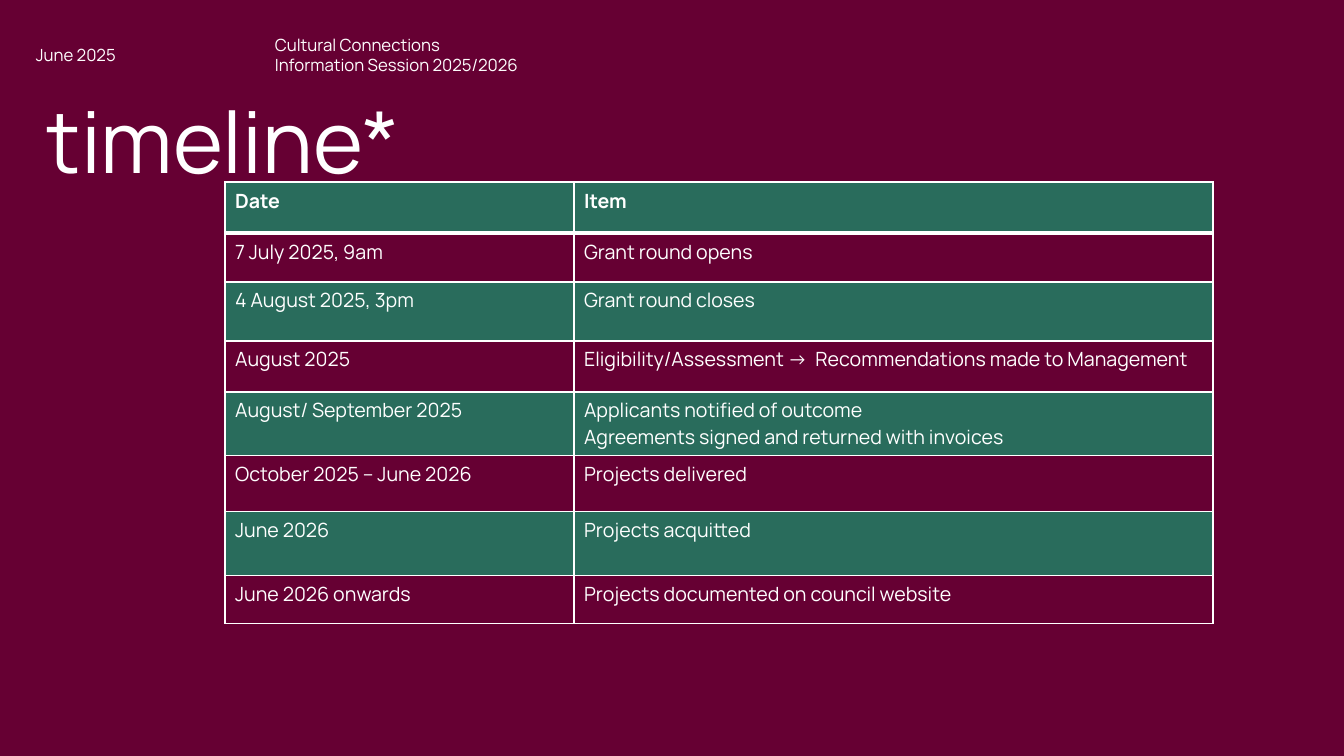
from lxml import etree
from pptx import Presentation
from pptx.dml.color import RGBColor
from pptx.enum.text import MSO_ANCHOR
from pptx.oxml.ns import qn
from pptx.util import Emu, Pt

TOP, MIDDLE = MSO_ANCHOR.TOP, MSO_ANCHOR.MIDDLE
WHITE = RGBColor(0xFF, 0xFF, 0xFF)
MAROON = RGBColor(0x66, 0x00, 0x33)
GREEN = RGBColor(0x29, 0x6C, 0x5C)
FONT = "Manrope"
EMU_PER_INCH = 914400
PX_PER_INCH = 100.8

COLUMN_WIDTHS = (349, 639)
# Each row: height in px, date, item
TIMELINE = [
    (51, "Date", "Item"),
    (49, "7 July 2025, 9am", "Grant round opens"),
    (59, "4 August 2025, 3pm", "Grant round closes"),
    (51, "August 2025",
     "Eligibility/Assessment ->  Recommendations made to Management"),
    (64, "August/ September 2025",
     "Applicants notified of outcome\nAgreements signed and returned with invoices"),
    (56, "October 2025 – June 2026", "Projects delivered"),
    (64, "June 2026", "Projects acquitted"),
    (48, "June 2026 onwards", "Projects documented on council website"),
]


def px(length):
    return Emu(round(length * EMU_PER_INCH / PX_PER_INCH))


def write_text(frame, text, size, bold=False, line_spacing=None):
    frame.text = text
    for paragraph in frame.paragraphs:
        if line_spacing:
            paragraph.line_spacing = line_spacing
        for run in paragraph.runs:
            run.font.name = FONT
            run.font.size = Pt(size)
            run.font.bold = bold
            run.font.color.rgb = WHITE


def add_text(slide, text, left, top, width, height, anchor=TOP, **text_format):
    frame = slide.shapes.add_textbox(px(left), px(top), px(width), px(height)).text_frame
    frame.word_wrap = True
    frame.vertical_anchor = anchor
    write_text(frame, text, **text_format)


def set_borders(cell, top, bottom):
    properties = cell._tc.get_or_add_tcPr()
    sides = (("a:lnL", 1), ("a:lnR", 1), ("a:lnT", top), ("a:lnB", bottom))
    for position, (side, points) in enumerate(sides):
        line = etree.Element(qn(side), w=str(Pt(points)))
        fill = etree.SubElement(line, qn("a:solidFill"))
        etree.SubElement(fill, qn("a:srgbClr"), val=str(WHITE))
        # Borders come before the fill in the cell properties
        properties.insert(position, line)


def add_timeline_table(slide, left, top):
    height = sum(row[0] for row in TIMELINE)
    table = slide.shapes.add_table(
        len(TIMELINE), len(COLUMN_WIDTHS),
        px(left), px(top), px(sum(COLUMN_WIDTHS)), px(height)).table
    for column, width in zip(table.columns, COLUMN_WIDTHS):
        column.width = px(width)
    for index, (row_height, *texts) in enumerate(TIMELINE):
        table.rows[index].height = px(row_height)
        for cell, text in zip(table.rows[index].cells, texts):
            write_text(cell.text_frame, text, size=14, bold=index == 0)
            cell.fill.solid()
            cell.fill.fore_color.rgb = MAROON if index % 2 else GREEN
            # A thick rule separates the header from the first row
            set_borders(cell, top=3 if index == 1 else 1, bottom=3 if index == 0 else 1)


def main():
    presentation = Presentation()
    presentation.slide_width, presentation.slide_height = px(1344), px(756)
    slide = presentation.slides.add_slide(presentation.slide_layouts[6])
    slide.background.fill.solid()
    slide.background.fill.fore_color.rgb = MAROON

    # Running header
    add_text(slide, "June 2025", 26, 35, 185, 40, anchor=MIDDLE, size=12)
    add_text(slide, "Cultural Connections\nInformation Session 2025/2026",
             265, 35, 454, 40, anchor=MIDDLE, size=12)

    # Title and schedule
    add_text(slide, "timeline*", 37, 111, 553, 90, size=61, line_spacing=0.7)
    add_timeline_table(slide, 225, 182)

    presentation.save("out.pptx")


if __name__ == "__main__":
    main()
